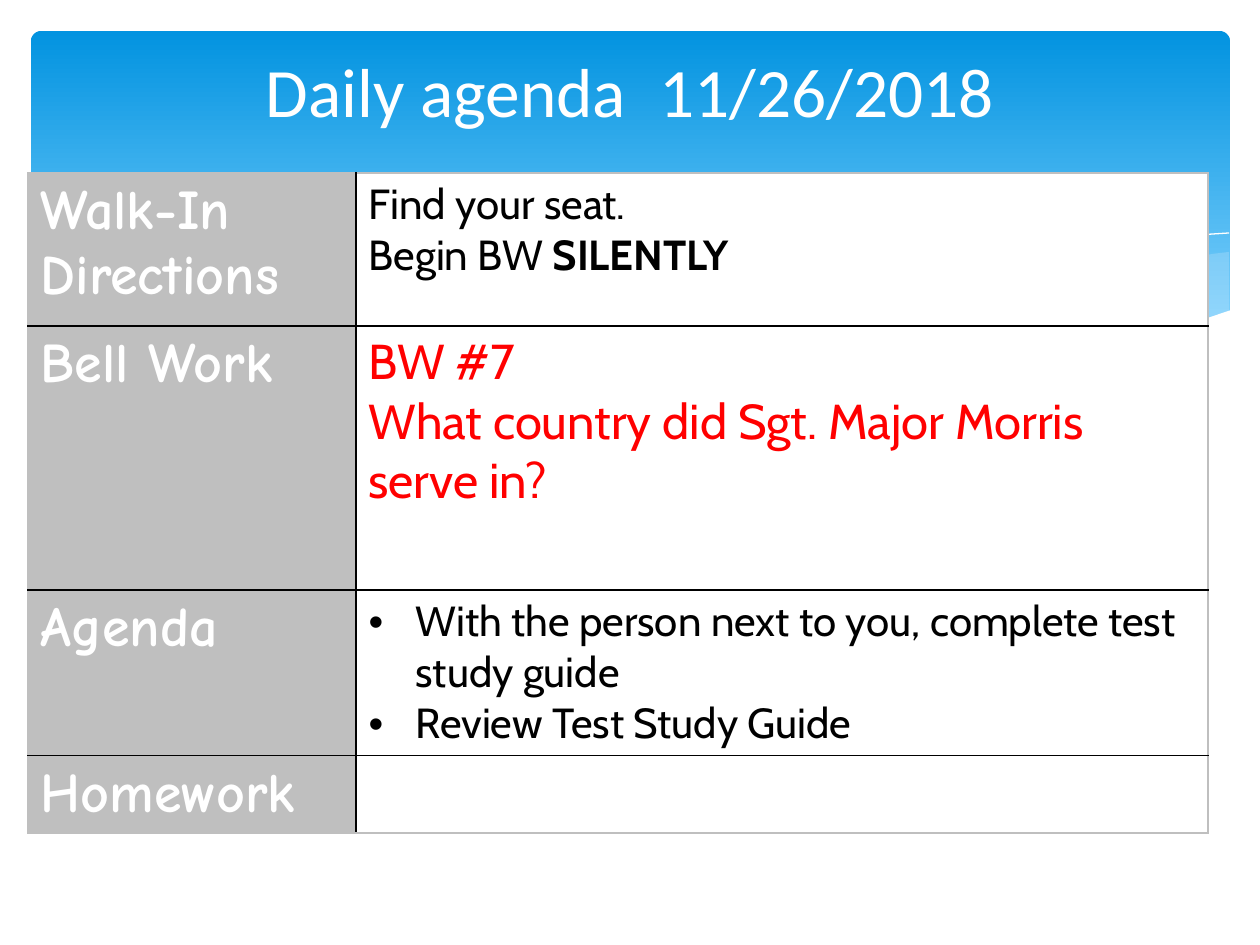
from dataclasses import dataclass

from lxml.etree import SubElement
from pptx import Presentation
from pptx.dml.color import RGBColor as RGB
from pptx.enum.shapes import MSO_SHAPE as Preset
from pptx.enum.text import MSO_ANCHOR as Anchor, PP_ALIGN as Align
from pptx.oxml.ns import qn
from pptx.util import Emu, Pt


@dataclass(frozen=True)
class Theme:
    band_top: str = "0293E0"
    band_bottom: str = "83D3FE"
    mist: str = "C6E7FC"
    white: str = "FFFFFF"
    black: str = "000000"
    grey: str = "BFBFBF"
    red: str = "FF0000"
    title_font: str = "Calibri"
    label_font: str = "Comic Neue"
    body_font: str = "Cabin"
    title_size: float = 39.6
    label_size: int = 32
    question_size: int = 28
    body_size: int = 24


THEME = Theme()
SCALE = 914400 / 126
BAND_BOX = (31, 31, 1199, 340)
WAVE_BOX = (29, 232, 1202, 183)
TITLE_BOX = (63, 46, 1134, 172)
AGENDA_BOX = (28, 173, 1180, 659)
LABEL_WIDTH = 328
ROW_HEIGHTS = (153, 264, 165, 77)

RIGHT_SWELL = [
    (1200, 20), (1183, 22), (1132, 33), (1056, 49), (953, 73), (890, 87), (804, 102),
    (859, 109), (925, 115), (997, 118), (1058, 115), (1112, 108), (1158, 97), (1200, 79),
]
LEFT_SWELL = [
    (1096, 112), (988, 96), (861, 70), (764, 48), (707, 34), (653, 24), (603, 15),
    (528, 6), (450, 1), (384, 4), (331, 9), (402, 19), (480, 34), (537, 48), (639, 70),
    (728, 89), (809, 103), (880, 113), (945, 117), (1015, 118), (1075, 115),
]
LEFT_CREST = [
    (360, 14), (404, 7), (458, 4), (517, 4), (587, 7), (672, 16), (772, 30),
    (887, 53), (1018, 84), (1114, 111),
]
RIGHT_CREST = [
    (743, 92), (794, 78), (878, 57), (949, 40), (1024, 25), (1099, 12), (1169, 3),
    (1200, 1),
]
FOREGROUND = [
    (1202, 78), (1155, 94), (1104, 107), (1042, 114), (975, 117), (908, 113), (813, 102),
    (731, 88), (638, 69), (534, 45), (464, 29), (399, 16), (339, 8), (286, 3), (237, 0),
    (194, 0), (155, 1), (121, 3), (91, 9), (67, 14), (45, 21), (29, 26), (16, 29),
    (0, 36), (0, 183), (1202, 183),
]

AGENDA = [
    ("Walk-In Directions", ["Find your seat.", ("Begin BW ", "SILENTLY")],
     THEME.body_size, THEME.black, False),
    ("Bell Work", ["BW #7", "What country did Sgt. Major Morris serve in?"],
     THEME.question_size, THEME.red, False),
    ("Agenda", ["With the person next to you, complete test study guide",
                "Review Test Study Guide"],
     THEME.body_size, THEME.black, True),
    ("Homework", [], THEME.body_size, THEME.black, False),
]


def px(value):
    return Emu(round(value * SCALE))


def rgb(color):
    return RGB.from_string(color)


def paint(fill, color):
    fill.solid()
    fill.fore_color.rgb = rgb(color)


def style(font, name, size, color, bold=False):
    font.name, font.size, font.bold = name, Pt(size), bold
    font.color.rgb = rgb(color)


def add_band(slide, box):
    band = slide.shapes.add_shape(Preset.ROUNDED_RECTANGLE, *map(px, box))
    band.adjustments[0] = 0.03
    band.shadow.inherit = False
    band.line.fill.background()
    band.fill.gradient()
    band.fill.gradient_angle = 270
    stops = zip(band.fill.gradient_stops, (0, 0.9), (THEME.band_top, THEME.band_bottom))
    for stop, position, color in stops:
        stop.position = position
        stop.color.rgb = rgb(color)


def add_curve(slide, box, points, closed):
    builder = slide.shapes.build_freeform(*points[0], scale=SCALE)
    builder.add_line_segments(points[1:], close=closed)
    curve = builder.convert_to_shape(px(box[0]), px(box[1]))
    curve.shadow.inherit = False
    return curve


def add_waves(slide, box):
    def add_water(points, color, opacity=100):
        water = add_curve(slide, box, points, True)
        water.line.fill.background()
        paint(water.fill, color)
        if opacity < 100:
            tint = water.fill._xPr.find(qn("a:solidFill"))[0]
            SubElement(tint, qn("a:alpha"), val=str(opacity * 1000))

    add_water(RIGHT_SWELL, THEME.mist, 29)
    add_water(LEFT_SWELL, THEME.mist, 40)
    for points in (LEFT_CREST, RIGHT_CREST):
        crest = add_curve(slide, box, points, False)
        crest.fill.background()
        crest.line.color.rgb = rgb(THEME.white)
        crest.line.width = Pt(0)
    add_water(FOREGROUND, THEME.white)


def place_title(slide, box):
    title = slide.shapes.title
    slide.shapes._spTree.append(title._element)
    title.left, title.top, title.width, title.height = map(px, box)
    frame = title.text_frame
    frame.text = "Daily agenda\t 11/26/2018"
    frame.vertical_anchor = Anchor.TOP
    frame.margin_top = px(2)
    heading = frame.paragraphs[0]
    heading.alignment = Align.CENTER
    style(heading.font, THEME.title_font, THEME.title_size, THEME.white)


def set_borders(cell, colors):
    properties = cell._tc.get_or_add_tcPr()
    for index, (side, color) in enumerate(zip("LRTB", colors)):
        border = properties.makeelement(qn(f"a:ln{side}"), {"w": str(Pt(1))})
        SubElement(SubElement(border, qn("a:solidFill")), qn("a:srgbClr"), val=color)
        properties.insert(index, border)


def add_bullet(paragraph):
    properties = paragraph._p.get_or_add_pPr()
    properties.set("marL", str(px(47)))
    properties.set("indent", str(-px(47)))
    SubElement(properties, qn("a:buFont"), typeface="Arial")
    SubElement(properties, qn("a:buChar"), char="•")


def fill_details(cell, lines, size, color, bulleted):
    frame = cell.text_frame
    for index, line in enumerate(lines):
        paragraph = frame.add_paragraph() if index else frame.paragraphs[0]
        plain, strong = line if isinstance(line, tuple) else (line, "")
        paragraph.add_run().text = plain
        if strong:
            emphasis = paragraph.add_run()
            emphasis.text = strong
            emphasis.font.bold = True
        if bulleted:
            add_bullet(paragraph)
        style(paragraph.font, THEME.body_font, size, color)


def add_agenda(slide, box):
    table = slide.shapes.add_table(len(AGENDA), 2, *map(px, box)).table
    table.first_row = table.horz_banding = False
    table.columns[0].width = px(LABEL_WIDTH)
    table.columns[1].width = px(box[2] - LABEL_WIDTH)
    last = len(AGENDA) - 1
    for index, (label, lines, size, color, bulleted) in enumerate(AGENDA):
        table.rows[index].height = px(ROW_HEIGHTS[index])
        heading, details = table.cell(index, 0), table.cell(index, 1)
        heading.text = label
        style(heading.text_frame.paragraphs[0].font, THEME.label_font,
              THEME.label_size, THEME.white, True)
        fill_details(details, lines, size, color, bulleted)
        top = THEME.black if index else THEME.grey
        bottom = THEME.black if index < last else THEME.grey
        paint(heading.fill, THEME.grey)
        paint(details.fill, THEME.white)
        set_borders(heading, (THEME.grey, THEME.black, top, bottom))
        set_borders(details, (THEME.black, THEME.grey, top, bottom))


def main():
    deck = Presentation()
    deck.slide_width, deck.slide_height = px(1260), px(945)
    slide = deck.slides.add_slide(deck.slide_layouts[5])
    add_band(slide, BAND_BOX)
    add_waves(slide, WAVE_BOX)
    place_title(slide, TITLE_BOX)
    add_agenda(slide, AGENDA_BOX)
    deck.save("out.pptx")


if __name__ == "__main__":
    main()
